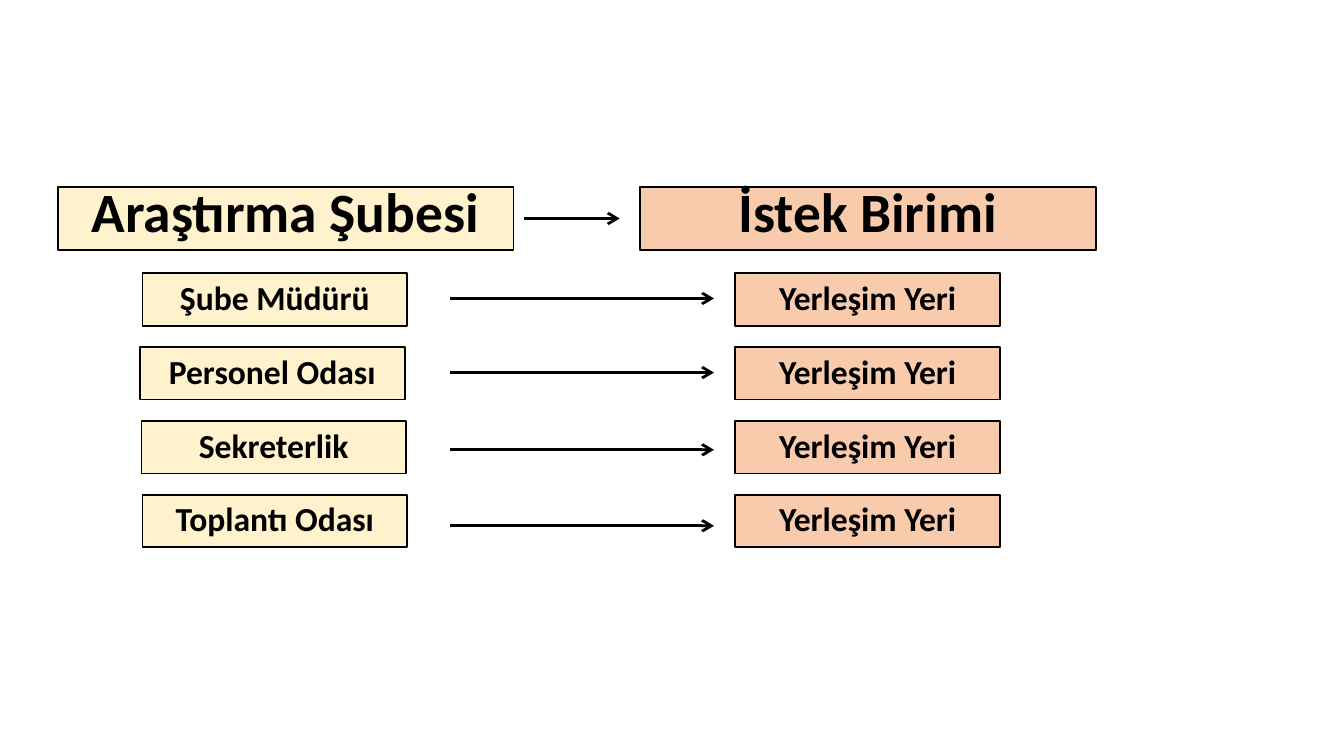
from dataclasses import dataclass

from lxml import etree
from pptx import Presentation
from pptx.dml.color import RGBColor
from pptx.enum.shapes import MSO_CONNECTOR, MSO_SHAPE
from pptx.enum.text import MSO_ANCHOR, MSO_AUTO_SIZE, PP_ALIGN
from pptx.oxml.ns import qn
from pptx.util import Pt

RECTANGLE = MSO_SHAPE.RECTANGLE
STRAIGHT = MSO_CONNECTOR.STRAIGHT
MIDDLE = MSO_ANCHOR.MIDDLE
CENTER = PP_ALIGN.CENTER
NO_AUTOFIT = MSO_AUTO_SIZE.NONE
TITLE_ONLY = 5


@dataclass(frozen=True)
class Theme:
    font: str = "Calibri"
    ink: RGBColor = RGBColor(0x00, 0x00, 0x00)
    branch: RGBColor = RGBColor(0xFF, 0xF2, 0xCC)
    unit: RGBColor = RGBColor(0xF8, 0xCB, 0xAD)
    heading_size: float = 29.7
    heading_spacing: float = 0.7
    room_size: float = 18
    room_spacing: float = 0.9
    border: float = 1
    arrow: float = 1.5


class FlowSlide:
    """Draws headings, rooms and arrows on one slide in a shared style."""

    def __init__(self, slide, theme):
        self.slide = slide
        self.theme = theme

    def style_box(self, box, text, fill, size, spacing):
        box.fill.solid()
        box.fill.fore_color.rgb = fill
        box.line.color.rgb = self.theme.ink
        box.line.width = Pt(self.theme.border)
        frame = box.text_frame
        frame.text = text
        frame.word_wrap = True
        frame.auto_size = NO_AUTOFIT
        frame.vertical_anchor = MIDDLE
        paragraph = frame.paragraphs[0]
        paragraph.alignment = CENTER
        paragraph.line_spacing = spacing
        paragraph.space_before = Pt(0)
        font = paragraph.runs[0].font
        font.name = self.theme.font
        font.size = Pt(size)
        font.bold = True
        font.color.rgb = self.theme.ink

    def add_box(self, left, top, width, height):
        box = self.slide.shapes.add_shape(
            RECTANGLE, Pt(left), Pt(top), Pt(width), Pt(height))
        box.shadow.inherit = False
        return box

    def style_heading(self, box, text, fill):
        self.style_box(box, text, fill, self.theme.heading_size,
                       self.theme.heading_spacing)

    def title(self, text, left, top, width, height):
        title = self.slide.shapes.title
        title.left, title.top = Pt(left), Pt(top)
        title.width, title.height = Pt(width), Pt(height)
        self.style_heading(title, text, self.theme.branch)

    def heading(self, text, left, top, width, height):
        box = self.add_box(left, top, width, height)
        self.style_heading(box, text, self.theme.unit)

    def room(self, text, fill, left, top, width, height):
        box = self.add_box(left, top, width, height)
        self.style_box(box, text, fill, self.theme.room_size,
                       self.theme.room_spacing)

    def arrow(self, start, end, y):
        arrow = self.slide.shapes.add_connector(
            STRAIGHT, Pt(start), Pt(y), Pt(end), Pt(y))
        arrow.line.color.rgb = self.theme.ink
        arrow.line.width = Pt(self.theme.arrow)
        properties = arrow.element.spPr
        outline = properties.find(qn("a:ln"))
        etree.SubElement(outline, qn("a:tailEnd"), type="arrow")
        etree.SubElement(properties, qn("a:effectLst"))


def main():
    presentation = Presentation()
    presentation.slide_width = Pt(720)
    presentation.slide_height = Pt(405)
    theme = Theme()
    layout = presentation.slide_layouts[TITLE_ONLY]
    flow = FlowSlide(presentation.slides.add_slide(layout), theme)

    heading_top, heading_width, heading_height = 100.1, 244.1, 33.9
    flow.title("Araştırma Şubesi", 31, heading_top, heading_width, heading_height)
    flow.heading("İstek Birimi", 342.9, heading_top, heading_width, heading_height)
    flow.arrow(280.8, 332, heading_top + heading_height / 2)

    room_width, room_height = 141.8, 28.3
    first_top, row_pitch = 146.2, 39.6
    rooms = (
        ("Şube Müdürü", 76.4, 159.9),
        ("Personel Odası", 75, 199.6),
        ("Sekreterlik", 75.8, 241),
        ("Toplantı Odası", 76.4, 281.7),
    )
    for row, (room, left, arrow_y) in enumerate(rooms):
        top = first_top + row * row_pitch
        flow.room(room, theme.branch, left, top, room_width, room_height)
        flow.room("Yerleşim Yeri", theme.unit, 394, top, room_width, room_height)
        flow.arrow(241.2, 382.5, arrow_y)

    presentation.save("out.pptx")


if __name__ == "__main__":
    main()
